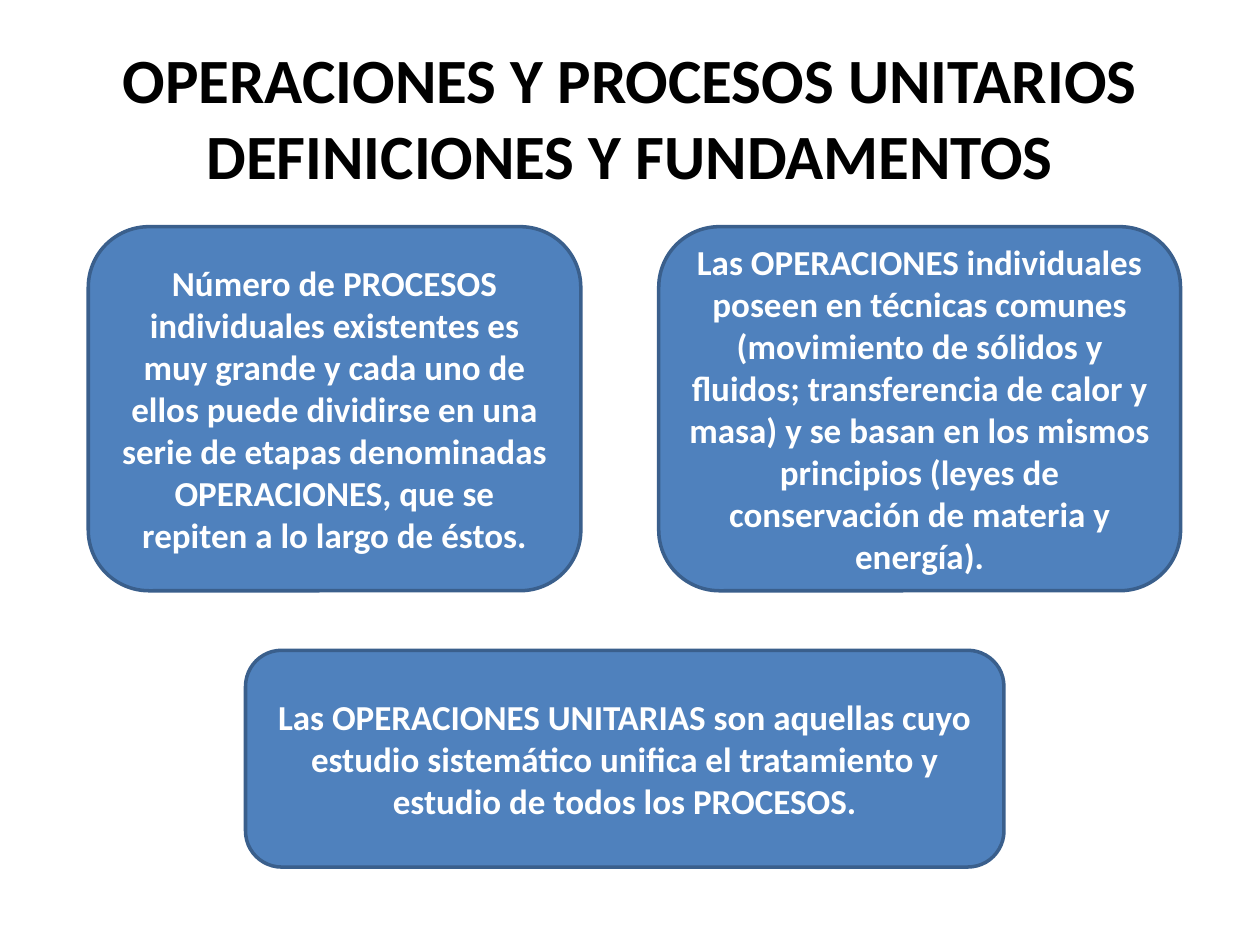
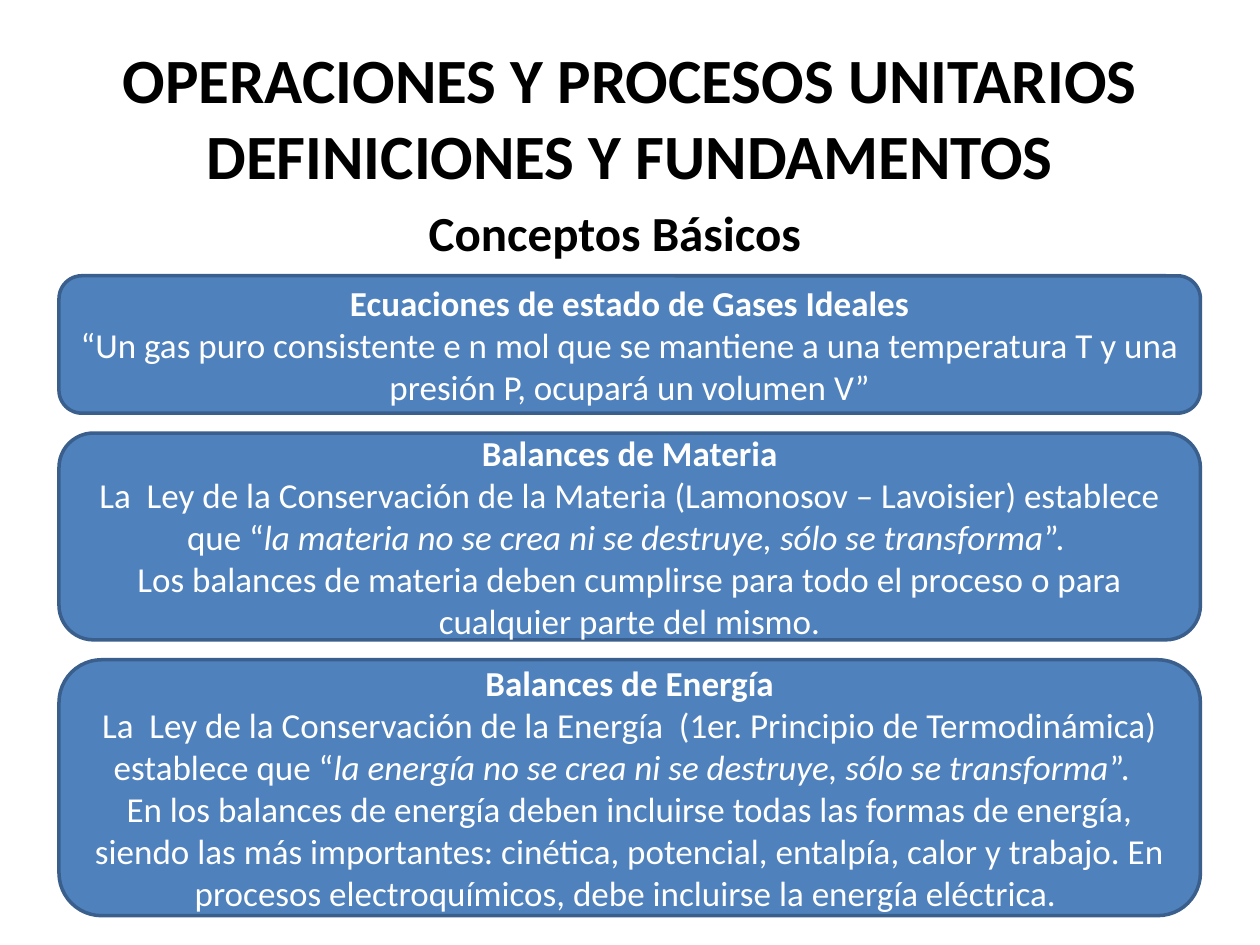
import dataclasses

import pptx
import pptx.dml.color
import pptx.enum.shapes
import pptx.enum.text
import pptx.util

Cm = pptx.util.Cm
Color = pptx.dml.color.RGBColor.from_string


@dataclasses.dataclass(frozen=True)
class Theme:
    font: str = "Calibri"
    ink: str = "000000"
    panel: str = "4F81BD"
    outline: str = "3A5F8C"
    panel_ink: str = "FFFFFF"
    outline_width: int = 2
    title_size: int = 36
    subtitle_size: int = 28
    body_size: int = 20


THEME = Theme()
TITLE_LINES = ("OPERACIONES Y PROCESOS UNITARIOS", "DEFINICIONES Y FUNDAMENTOS")

DEFINITIONS = [
    ("Número de PROCESOS individuales existentes es muy grande y cada uno de ellos "
     "puede dividirse en una serie de etapas denominadas OPERACIONES, que se repiten "
     "a lo largo de éstos.", (1.78, 4.57, 9.93, 7.34)),
    ("Las OPERACIONES individuales poseen en técnicas comunes (movimiento de sólidos "
     "y fluidos; transferencia de calor y masa) y se basan en los mismos principios "
     "(leyes de conservación de materia y energía).", (13.28, 4.57, 10.52, 7.34)),
    ("Las OPERACIONES UNITARIAS son aquellas cuyo estudio sistemático unifica el "
     "tratamiento y estudio de todos los PROCESOS.", (4.95, 13.11, 15.29, 4.37)),
]

CONCEPTS = [
    (2.77, "Ecuaciones de estado de Gases Ideales", [
        ["“Un gas puro consistente e n mol que se mantiene a una temperatura T y una "
         "presión P, ocupará un volumen V”"],
    ]),
    (4.17, "Balances de Materia", [
        ["La  Ley de la Conservación de la Materia (Lamonosov – Lavoisier) establece que “",
         "la materia no se crea ni se destruye, sólo se transforma", "”. "],
        ["Los balances de materia deben cumplirse para todo el proceso o para cualquier "
         "parte del mismo."],
    ]),
    (5.16, "Balances de Energía", [
        ["La  Ley de la Conservación de la Energía  (1er. Principio de Termodinámica) "
         "establece que “",
         "la energía no se crea ni se destruye, sólo se transforma", "”.  "],
        ["En los balances de energía deben incluirse todas las formas de energía, siendo "
         "las más importantes: cinética, potencial, entalpía, calor y trabajo. En procesos "
         "electroquímicos, debe incluirse la energía eléctrica. "],
    ]),
]


def add_text(paragraph, text, size=THEME.body_size, color=THEME.ink, bold=False, italic=False):
    paragraph.alignment = pptx.enum.text.PP_ALIGN.CENTER
    run = paragraph.add_run()
    run.text = text
    run.font.name = THEME.font
    run.font.size = pptx.util.Pt(size)
    run.font.color.rgb = Color(color)
    run.font.bold = bold
    run.font.italic = italic


def prepare_frame(shape, anchor):
    frame = shape.text_frame
    frame.word_wrap = True
    frame.auto_size = pptx.enum.text.MSO_AUTO_SIZE.NONE
    frame.vertical_anchor = anchor
    return frame


def add_titled_slide(deck):
    slide = deck.slides.add_slide(deck.slide_layouts[5])
    title = slide.shapes.title
    title.left, title.top, title.width, title.height = map(Cm, (1.27, 0.76, 22.86, 3.18))
    paragraph = prepare_frame(title, pptx.enum.text.MSO_ANCHOR.MIDDLE).paragraphs[0]
    for index, line in enumerate(TITLE_LINES):
        if index:
            paragraph.add_line_break()
        add_text(paragraph, line, size=THEME.title_size, bold=True)
    return slide


def add_panel(slide, bounds):
    panel = slide.shapes.add_shape(
        pptx.enum.shapes.MSO_SHAPE.ROUNDED_RECTANGLE, *map(Cm, bounds))
    panel.shadow.inherit = False
    panel.fill.solid()
    panel.fill.fore_color.rgb = Color(THEME.panel)
    panel.line.color.rgb = Color(THEME.outline)
    panel.line.width = pptx.util.Pt(THEME.outline_width)
    return prepare_frame(panel, pptx.enum.text.MSO_ANCHOR.MIDDLE)


def add_subtitle(slide, text, bounds):
    subtitle = slide.shapes.add_textbox(*map(Cm, bounds))
    frame = prepare_frame(subtitle, pptx.enum.text.MSO_ANCHOR.TOP)
    add_text(frame.paragraphs[0], text, size=THEME.subtitle_size, bold=True)


def add_concept(slide, bounds, heading, statements):
    frame = add_panel(slide, bounds)
    add_text(frame.paragraphs[0], heading, color=THEME.panel_ink, bold=True)
    for parts in statements:
        paragraph = frame.add_paragraph()
        for index, part in enumerate(parts):
            add_text(paragraph, part, color=THEME.panel_ink, italic=index == 1)


def build_definitions(deck):
    slide = add_titled_slide(deck)
    for definition, bounds in DEFINITIONS:
        frame = add_panel(slide, bounds)
        add_text(frame.paragraphs[0], definition, color=THEME.panel_ink, bold=True)


def build_concepts(deck):
    slide = add_titled_slide(deck)
    add_subtitle(slide, "Conceptos Básicos", (0.99, 3.96, 22.81, 1.45))
    top, gap = 5.56, 0.4
    for height, heading, statements in CONCEPTS:
        add_concept(slide, (1.19, top, 23.01, height), heading, statements)
        top += height + gap


def main():
    deck = pptx.Presentation()
    deck.slide_width, deck.slide_height = Cm(25.4), Cm(19.05)
    build_definitions(deck)
    build_concepts(deck)
    deck.save("out.pptx")


if __name__ == "__main__":
    main()
